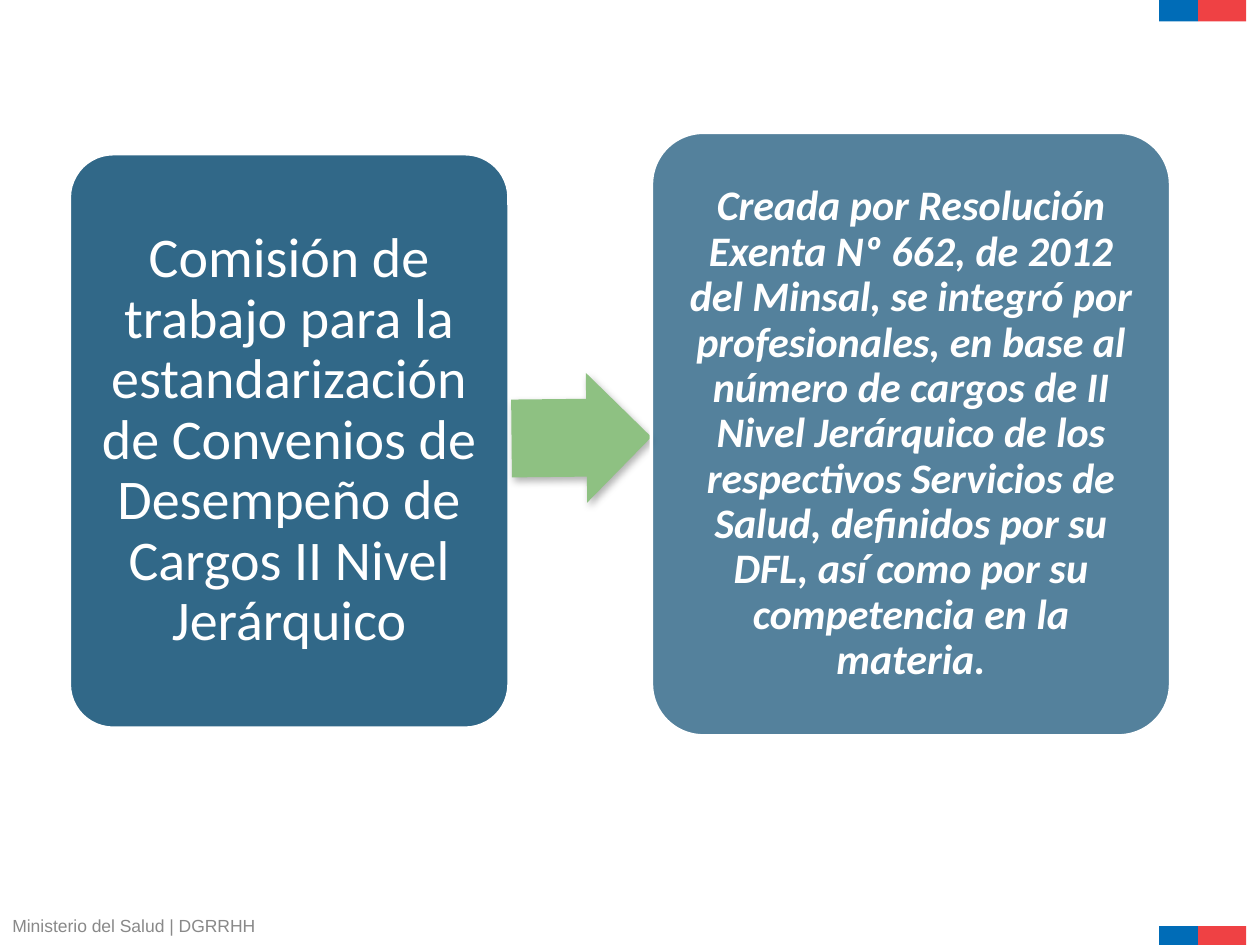
from lxml import etree
from pptx import Presentation
from pptx.dml.color import RGBColor
from pptx.enum import shapes, text
from pptx.oxml import ns
from pptx.util import Inches, Pt

FLAG_BLUE = RGBColor(0x00, 0x6C, 0xB7)
FLAG_RED = RGBColor(0xEF, 0x41, 0x44)
CARD_BLUE = RGBColor(0x1B, 0x58, 0x7C)
ARROW_GREEN = RGBColor(0x8E, 0xC1, 0x82)
SHADOW_BLACK = RGBColor(0, 0, 0)
FOOTER_GRAY = RGBColor(0x89, 0x89, 0x89)
WHITE = RGBColor(0xFF, 0xFF, 0xFF)

COMMISSION = ("Comisión de trabajo para la estandarización de Convenios de "
              "Desempeño de Cargos II Nivel Jerárquico")
ORIGIN = ("Creada por Resolución Exenta Nº 662, de 2012 del Minsal, se integró "
          "por profesionales, en base al número de cargos de II Nivel Jerárquico "
          "de los respectivos Servicios de Salud, definidos por su DFL, así como "
          "por su competencia en la materia.")


def write(frame, words, size, color=WHITE, font="Calibri", bold=False,
          italic=False, align=text.PP_ALIGN.CENTER, spacing=0.9):
    paragraph = frame.paragraphs[0]
    paragraph.alignment = align
    paragraph.line_spacing = spacing
    run = paragraph.add_run()
    run.text = words
    run.font.name, run.font.size = font, Pt(size)
    run.font.bold, run.font.italic = bold, italic
    run.font.color.rgb = color


def add_child(parent, tag, **attributes):
    values = {name: str(value) for name, value in attributes.items()}
    return etree.SubElement(parent, ns.qn(tag), values)


class SlideBuilder:
    """Holds the current slide and the style its elements share."""

    card_radius = 0.1
    card_border = Pt(2)
    flag_left, flag_height = 9.2, 0.17

    def __init__(self, slide):
        self.slide = slide

    def block(self, preset, left, top, width, height, fill):
        block = self.slide.shapes.add_shape(
            preset, Inches(left), Inches(top), Inches(width), Inches(height))
        block.shadow.inherit = False
        block.fill.solid()
        block.fill.fore_color.rgb = fill
        block.line.fill.background()
        return block

    def flag(self, top):
        left = self.flag_left
        for width, color in ((0.31, FLAG_BLUE), (0.38, FLAG_RED)):
            self.block(shapes.MSO_SHAPE.RECTANGLE, left, top, width,
                       self.flag_height, color)
            left += width

    def card(self, left, top, width, height, words, opacity, inset, **style):
        card = self.block(shapes.MSO_SHAPE.ROUNDED_RECTANGLE,
                          left, top, width, height, CARD_BLUE)
        card.adjustments[0] = self.card_radius
        card.line.color.rgb = WHITE
        card.line.width = self.card_border
        fill_color = card._element.spPr.find(ns.qn("a:solidFill"))[0]
        add_child(fill_color, "a:alpha", val=opacity * 1000)
        frame = card.text_frame
        frame.word_wrap = True
        frame.vertical_anchor = text.MSO_ANCHOR.MIDDLE
        frame.margin_left = frame.margin_right = Inches(inset)
        frame.margin_top = frame.margin_bottom = Inches(inset)
        write(frame, words, **style)

    def arrow(self, left, top, width, height, rotation):
        arrow = self.block(shapes.MSO_SHAPE.RIGHT_ARROW,
                           left, top, width, height, ARROW_GREEN)
        arrow.adjustments[0], arrow.adjustments[1] = 0.6, 0.5
        arrow.rotation = rotation
        effects = arrow._element.spPr.find(ns.qn("a:effectLst"))
        shadow = add_child(effects, "a:outerShdw", blurRad=Pt(4.5),
                           dist=Pt(2.6), dir=53 * 60000, rotWithShape=0)
        shadow_color = add_child(shadow, "a:srgbClr", val=SHADOW_BLACK)
        add_child(shadow_color, "a:alpha", val=30000)

    def footer(self, left, top, width, height, words):
        footer = self.slide.shapes.add_textbox(
            Inches(left), Inches(top), Inches(width), Inches(height))
        footer.text_frame.word_wrap = False
        footer.text_frame.auto_size = text.MSO_AUTO_SIZE.SHAPE_TO_FIT_TEXT
        write(footer.text_frame, words, 10, FOOTER_GRAY, "Arial",
              align=text.PP_ALIGN.LEFT, spacing=1.0)


def main():
    deck = Presentation()
    deck.slide_width, deck.slide_height = Inches(10), Inches(7.5)
    builder = SlideBuilder(deck.slides.add_slide(deck.slide_layouts[6]))
    for top in (0, 7.35):
        builder.flag(top)
    builder.footer(0, 7.21, 2.13, 0.27, "Ministerio del Salud | DGRRHH")
    builder.card(0.55, 1.22, 3.49, 4.56, COMMISSION, opacity=90, inset=0.13,
                 size=32)
    builder.arrow(4.06, 2.96, 1.11, 1.03, rotation=359.4)
    builder.card(5.17, 1.05, 4.12, 4.79, ORIGIN, opacity=75, inset=0.1,
                 size=24, bold=True, italic=True)
    deck.save("out.pptx")


if __name__ == "__main__":
    main()
